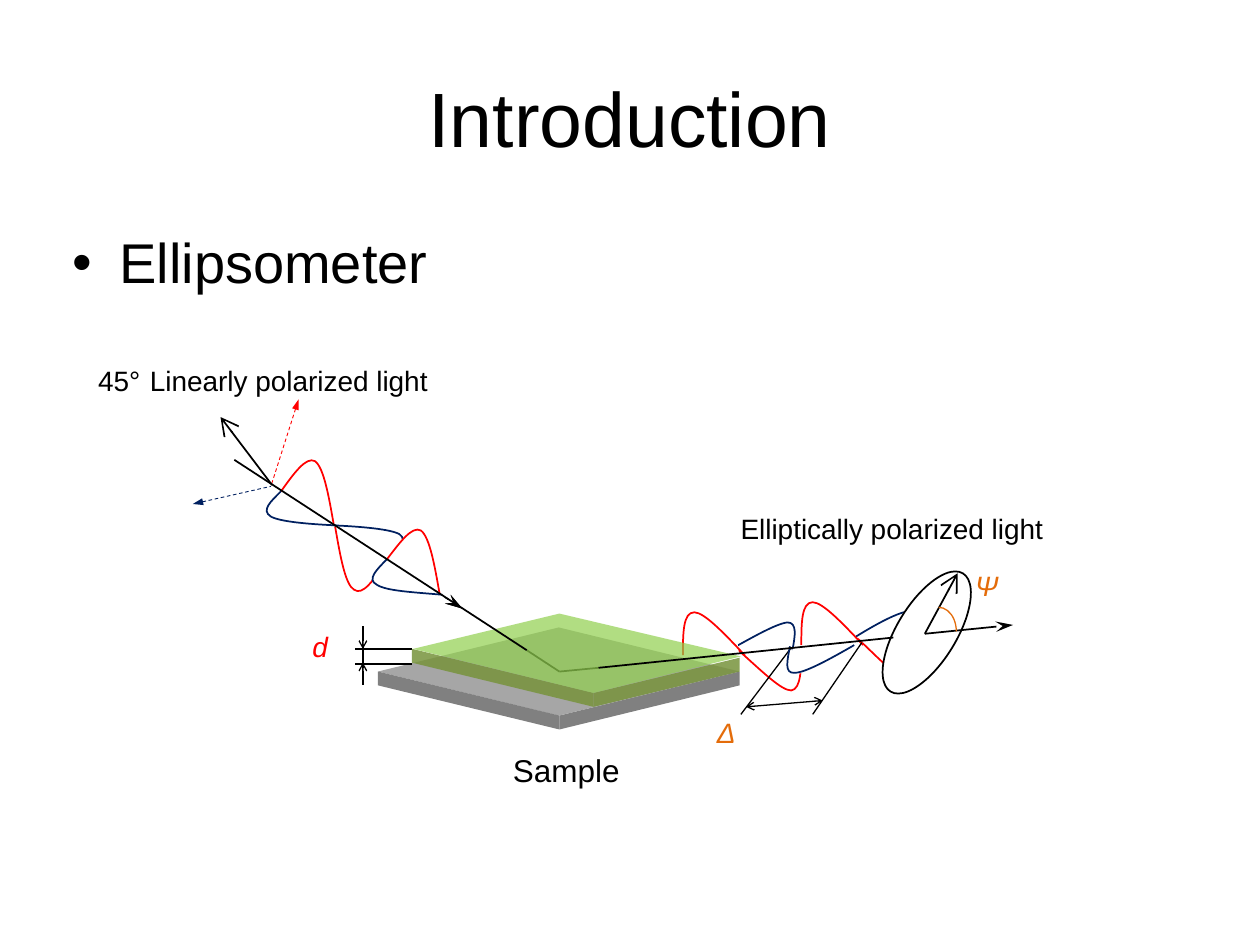
"""Build the ellipsometer introduction slide."""
from lxml.etree import SubElement
from pptx import Presentation
from pptx.dml.color import RGBColor
from pptx.enum.dml import MSO_LINE
from pptx.enum.shapes import MSO_CONNECTOR, MSO_SHAPE
from pptx.enum.text import MSO_ANCHOR, PP_ALIGN
from pptx.oxml.ns import qn
from pptx.util import Cm, Pt

COLORS = {
    "black": "000000", "white": "FFFFFF", "red": "FF0000", "navy": "002060",
    "orange": "E46C0A", "gray": "808080", "silver": "A6A6A6",
    "olive": "77933C", "green": "92D050",
}
ARROWS = {
    "axis": {"type": "triangle", "w": "sm", "len": "med"},
    "beam": {"type": "stealth", "w": "med", "len": "lg"},
    "vector": {"type": "arrow", "w": "lg", "len": "lg"},
    "measure": {"type": "arrow", "w": "sm", "len": "sm"},
}
SLIDE_SIZE = (10, 7.5)
SLAB_THICKNESS = 0.11

TITLE = ("Introduction", (0.5, 0.3, 9, 1.25))
BULLET = ("Ellipsometer", (0.48, 1.76, 9, 4.95))
BULLET_INDENT = 0.37
SAMPLE = ("Sample", (3.91, 5.91, 1.17, 0.4), "black", 18, PP_ALIGN.CENTER)

SUBSTRATE = [
    ("preset", "DIAMOND", (3, 4.98, 2.87, 0.7), 0, "silver"),
    ("wall", (3, 5.33), (4.44, 5.68), "gray", 100),
    ("wall", (4.44, 5.68), (5.87, 5.33), "gray", 100),
]
INCIDENT_WAVE = [
    ("line", (2.37, 3.17), (2.15, 3.86), 0.5, "axis", None, "red"),
    ("line", (1.53, 4), (2.15, 3.86), 0.5, "axis", None, "navy"),
    ("wave", "red", [(2.23, 3.9), (2.33, 3.76), (2.43, 3.62), (2.5, 3.66),
                     (2.57, 3.71), (2.61, 3.94), (2.65, 4.17)]),
    ("wave", "navy", [(3.08, 4.44), (3.16, 4.36), (3.24, 4.29), (3.17, 4.24),
                      (3.1, 4.2), (2.87, 4.18), (2.65, 4.17)]),
    ("wave", "red", [(3.07, 4.45), (2.96, 4.61), (2.88, 4.73), (2.81, 4.68),
                     (2.74, 4.64), (2.7, 4.41), (2.66, 4.18)]),
    ("preset", "RECTANGLE", (2.96, 4.28, 0.31, 0.43), 0, "white"),
    ("line", (3.45, 4.69), (3.67, 4.83), 0.5, None, "beam"),
    ("wave", "navy", [(2.23, 3.9), (2.15, 3.98), (2.07, 4.05), (2.15, 4.1),
                      (2.22, 4.14), (2.44, 4.16), (2.67, 4.17)]),
    ("line", (1.75, 3.31), (2.16, 3.85), 1, "vector", None),
    ("label", " Linearly polarized light", (1.03, 2.84, 2.83, 0.47), "black", 16),
    ("label", "45°", (0.68, 2.84, 0.87, 0.47), "black", 16),
]
THICKNESS_MARK = [
    ("line", (4.18, 5.16), (4.44, 5.33), 1, None, None),
    ("line", (4.44, 5.33), (4.75, 5.3), 1, None, None),
    ("line", (2.82, 5.15), (3.27, 5.15), 0.75, None, None),
    ("line", (2.88, 5.26), (2.88, 5.44), 0.75, "measure", None),
    ("line", (2.82, 5.27), (3.27, 5.27), 0.75, None, None),
    ("line", (2.88, 5.15), (2.88, 4.97), 0.75, "measure", None),
    ("line", (2.88, 5.13), (2.88, 5.3), 0.75, None, None),
    ("label", "d", (2.04, 4.95, 1, 0.47), "red", 16, PP_ALIGN.CENTER, True),
]
REFLECTED_WAVE = [
    ("label", "Elliptically polarized light", (5.78, 4.01, 3.3, 0.47), "black", 16),
    ("wave", "navy", [(6.29, 5.16), (6.31, 5.05), (6.33, 4.94), (6.25, 4.94),
                      (6.16, 4.95), (5.97, 5.06), (5.77, 5.17)]),
    ("wave", "red", [(6.36, 5.13), (6.36, 5.3), (6.36, 5.47), (6.28, 5.48),
                     (6.2, 5.48), (6.04, 5.32), (5.86, 5.16)]),
    ("preset", "RECTANGLE", (6.3, 5.14, 0.16, 0.2), 353.1, "white"),
    ("preset", "RECTANGLE", (5.72, 5.12, 0.14, 0.07), 353.1, "white"),
    ("wave", "red", [(5.42, 5.2), (5.42, 5.03), (5.42, 4.86), (5.51, 4.86),
                     (5.59, 4.86), (5.75, 5.03), (5.91, 5.2)]),
    ("line", (5.88, 5.67), (6.28, 5.14), 0.75, None, None),
    ("wave", "red", [(7.3, 5.05), (7.31, 5.22), (7.31, 5.39), (7.22, 5.4),
                     (7.14, 5.4), (6.98, 5.23), (6.81, 5.07)]),
    ("wave", "navy", [(7.26, 5.06), (7.29, 4.96), (7.31, 4.85), (7.23, 4.85),
                      (7.14, 4.85), (6.94, 4.96), (6.75, 5.08)]),
    ("preset", "RECTANGLE", (6.74, 5, 0.06, 0.15), 311.3, "white"),
    ("wave", "red", [(6.36, 5.12), (6.36, 4.95), (6.36, 4.78), (6.45, 4.78),
                     (6.53, 4.78), (6.69, 4.95), (6.85, 5.12)]),
    ("wave", "navy", [(6.27, 5.13), (6.25, 5.24), (6.22, 5.35), (6.31, 5.34),
                      (6.39, 5.34), (6.59, 5.23), (6.78, 5.12)]),
    ("line", (6.45, 5.67), (6.84, 5.1), 0.75, None, None),
]
ELLIPSE_ANGLES = [
    ("preset", "OVAL", (7.12, 4.47, 0.47, 1.1), 31.5, "white", "black", 1),
    ("line", (7.34, 5.03), (8.04, 4.96), 1, None, "beam"),
    ("line", (7.6, 4.55), (7.34, 5.03), 1, "vector", None),
    ("line", (5.92, 5.61), (6.53, 5.56), 0.75, "measure", "measure"),
    ("label", "Δ", (5.59, 5.63, 1.32, 0.37), "orange", 16, PP_ALIGN.LEFT, True),
    ("label", "Ψ", (7.64, 4.46, 1.89, 0.37), "orange", 16, PP_ALIGN.LEFT, True),
    ("preset", "ARC", (7.31, 4.82, 0.28, 0.38), 0, None, "orange", 0.75),
]
BEAM_FRONT = [
    ("line", (3.3, 4.59), (3.67, 4.83), 0.5, None, "beam"),
    ("preset", "RECTANGLE", (3.12, 4.55, 0.45, 0.12), 31.7, "white"),
    ("wave", "red", [(3.07, 4.44), (3.17, 4.31), (3.27, 4.17), (3.34, 4.21),
                     (3.41, 4.26), (3.45, 4.49), (3.49, 4.72)]),
    ("wave", "navy", [(3.07, 4.44), (2.99, 4.52), (2.91, 4.6), (2.99, 4.64),
                      (3.06, 4.69), (3.28, 4.7), (3.51, 4.72)]),
]
FILM = [
    ("wall", (3.27, 5.15), (4.71, 5.5), "olive", 85),
    ("wall", (4.71, 5.5), (5.87, 5.22), "olive", 85),
    ("face", [(3.28, 5.15), (4.44, 4.87), (5.88, 5.21), (4.71, 5.5)], "green", 71),
    ("line", (1.86, 3.65), (4.18, 5.16), 1, None, None),
    ("line", (4.75, 5.3), (7.09, 5.06), 1, None, None),
]
DRAWING = (SUBSTRATE + INCIDENT_WAVE + THICKNESS_MARK + REFLECTED_WAVE
           + ELLIPSE_ANGLES + BEAM_FRONT + FILM)


def lengths(values):
    return [Cm(value * 2.54) for value in values]


def rgb(name):
    return RGBColor.from_string(COLORS[name])


def paint(shape, fill=None, line=None, width=1, opacity=100):
    shape.shadow.inherit = False
    if fill:
        shape.fill.solid()
        shape.fill.fore_color.rgb = rgb(fill)
        if opacity < 100:
            color = next(shape._element.spPr.iter(qn("a:srgbClr")))
            SubElement(color, qn("a:alpha"), val=str(opacity * 1000))
    else:
        shape.fill.background()
    if line:
        shape.line.color.rgb = rgb(line)
        shape.line.width = Pt(width)
    else:
        shape.line.fill.background()


def add_preset(shapes, kind, box, rotation, fill, line=None, width=1):
    shape = shapes.add_shape(getattr(MSO_SHAPE, kind), *lengths(box))
    shape.rotation = rotation
    paint(shape, fill, line, width)


def add_outline(shapes, points, closed):
    start, *rest = [lengths(point) for point in points]
    builder = shapes.build_freeform(*start)
    builder.add_line_segments(rest, close=closed)
    return builder.convert_to_shape()


def add_face(shapes, points, fill, opacity):
    paint(add_outline(shapes, points, True), fill, opacity=opacity)


def add_wall(shapes, start, end, fill, opacity):
    lower = [(x, y + SLAB_THICKNESS) for x, y in (end, start)]
    add_face(shapes, [start, end, *lower], fill, opacity)


def add_wave(shapes, color, controls):
    shape = add_outline(shapes, controls, False)
    outline = next(shape._element.iter(qn("a:path")))
    segments = outline.findall(qn("a:lnTo"))
    for first in range(0, len(segments), 3):
        curve = SubElement(outline, qn("a:cubicBezTo"))
        for segment in segments[first:first + 3]:
            curve.append(segment[0])
            outline.remove(segment)
    paint(shape, line=color)


def add_line(shapes, start, end, width, head, tail, color="black"):
    connector = shapes.add_connector(MSO_CONNECTOR.STRAIGHT, *lengths(start + end))
    connector.line.color.rgb = rgb(color)
    connector.line.width = Pt(width)
    if color != "black":
        connector.line.dash_style = MSO_LINE.DASH
    properties = connector._element.spPr
    for tag, arrow in (("a:headEnd", head), ("a:tailEnd", tail)):
        if arrow:
            SubElement(properties.find(qn("a:ln")), qn(tag), **ARROWS[arrow])
    SubElement(properties, qn("a:effectLst"))


def write(shape, text, color, size, align=PP_ALIGN.LEFT, italic=False, anchor=MSO_ANCHOR.TOP):
    frame = shape.text_frame
    frame.word_wrap, frame.vertical_anchor = True, anchor
    paragraph = frame.paragraphs[0]
    paragraph.alignment = align
    run = paragraph.add_run()
    run.text = text
    for name, value in {"name": "Arial", "size": Pt(size), "italic": italic}.items():
        setattr(run.font, name, value)
    run.font.color.rgb = rgb(color)
    return paragraph


def add_label(shapes, text, box, *style):
    return write(shapes.add_textbox(*lengths(box)), text, *style)


def main():
    presentation = Presentation()
    presentation.slide_width, presentation.slide_height = lengths(SLIDE_SIZE)
    shapes = presentation.slides.add_slide(presentation.slide_layouts[5]).shapes
    title, box = TITLE
    for name, value in zip(("left", "top", "width", "height"), lengths(box)):
        setattr(shapes.title, name, value)
    write(shapes.title, title, "black", 44, PP_ALIGN.CENTER, anchor=MSO_ANCHOR.MIDDLE)
    paragraph = add_label(shapes, *BULLET, "black", 32)
    paragraph.space_before = Pt(4)
    properties = paragraph._p.get_or_add_pPr()
    indent = Cm(BULLET_INDENT * 2.54)
    for name, value in {"marL": indent, "indent": -indent}.items():
        properties.set(name, str(value))
    SubElement(properties, qn("a:buFont"), typeface="Arial")
    SubElement(properties, qn("a:buChar"), char="•")
    drawers = {"preset": add_preset, "wall": add_wall, "face": add_face,
               "wave": add_wave, "line": add_line, "label": add_label}
    diagram = shapes.add_group_shape()
    for kind, *values in DRAWING:
        drawers[kind](diagram.shapes, *values)
    add_label(shapes, *SAMPLE)
    presentation.save("out.pptx")


if __name__ == "__main__":
    main()
